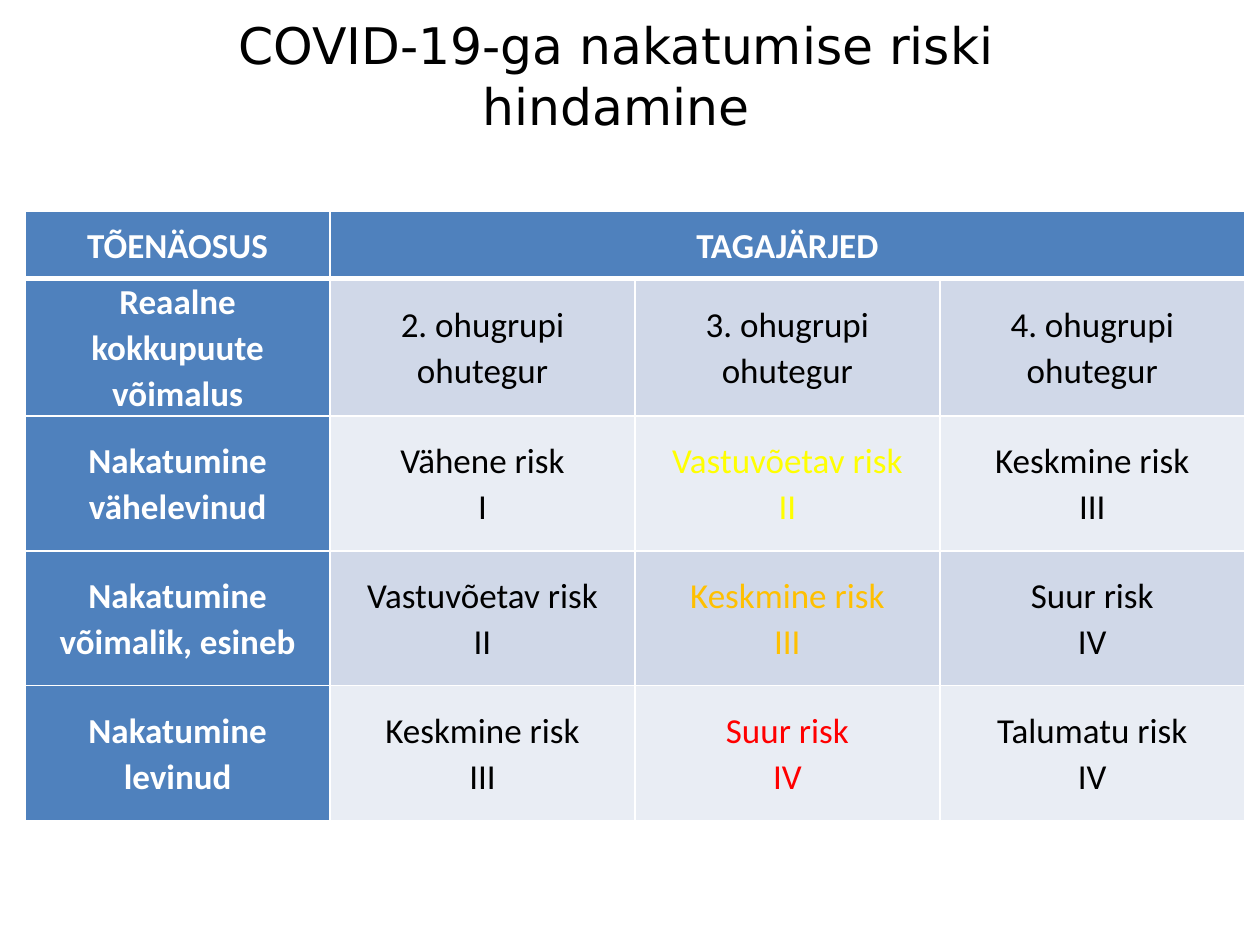
from dataclasses import dataclass

from lxml import etree
from pptx import Presentation
from pptx.dml.color import RGBColor
from pptx.enum.text import MSO_ANCHOR, MSO_AUTO_SIZE, PP_ALIGN
from pptx.oxml.ns import qn
from pptx.util import Inches, Pt

CENTER = PP_ALIGN.CENTER
MIDDLE = MSO_ANCHOR.MIDDLE
NO_FIT = MSO_AUTO_SIZE.NONE
TITLE_ONLY = 5


@dataclass(frozen=True)
class Theme:
    white: str = "FFFFFF"
    black: str = "000000"
    head: str = "4F81BD"
    bands: tuple = ("D0D8E8", "E9EDF4")
    yellow: str = "FFFF00"
    amber: str = "FFC000"
    red: str = "FF0000"
    title_font: str = "DejaVu Sans"
    title_size: float = 28.8
    font: str = "Calibri"
    size: int = 20
    thin: int = 1
    thick: int = 3


THEME = Theme()

TITLE = "COVID-19-ga nakatumise riski hindamine"
ROWS = [
    ["TÕENÄOSUS", "TAGAJÄRJED", "", ""],
    ["Reaalne kokkupuute võimalus", "2. ohugrupi ohutegur",
     "3. ohugrupi ohutegur", "4. ohugrupi ohutegur"],
    ["Nakatumine vähelevinud", "Vähene risk\nI",
     "Vastuvõetav risk\nII", "Keskmine risk\nIII"],
    ["Nakatumine võimalik, esineb", "Vastuvõetav risk\nII",
     "Keskmine risk\nIII", "Suur risk\nIV"],
    ["Nakatumine levinud", "Keskmine risk\nIII",
     "Suur risk\nIV", "Talumatu risk\nIV"],
]
ACCENTS = {(2, 2): THEME.yellow, (3, 2): THEME.amber, (4, 2): THEME.red}
COL_WIDTH = 2.42
HEAD_HEIGHT = 0.53
ROW_HEIGHT = 1.07


def apply(target, values):
    for name, value in values.items():
        setattr(target, name, value)


def style(para, font, size, color, bold=False):
    para.alignment = CENTER
    apply(para.font, {"name": font, "size": Pt(size), "bold": bold})
    para.font.color.rgb = RGBColor.from_string(color)


def add_title(slide):
    title = slide.shapes.title
    apply(title, {"left": Inches(0.75), "top": Inches(0.13),
                  "width": Inches(8.28), "height": Inches(0.93)})
    frame = title.text_frame
    frame.text = TITLE
    apply(frame, {"word_wrap": True, "auto_size": NO_FIT,
                  "vertical_anchor": MIDDLE})
    style(frame.paragraphs[0], THEME.title_font, THEME.title_size, THEME.black)


def set_borders(cell, widths):
    """Draw white borders; widths maps a side (L, R, T, B) to points."""
    props = cell._tc.get_or_add_tcPr()
    for spot, (side, width) in enumerate(widths.items()):
        line = etree.Element(qn(f"a:ln{side}"), w=str(Pt(width)))
        fill = etree.SubElement(line, qn("a:solidFill"))
        etree.SubElement(fill, qn("a:srgbClr"), val=THEME.white)
        props.insert(spot, line)


def fill_cell(cell, text, row, col):
    is_head = row == 0 or col == 0
    back = THEME.head if is_head else THEME.bands[(row - 1) % 2]
    color = THEME.white if is_head else ACCENTS.get((row, col), THEME.black)
    cell.fill.solid()
    cell.fill.fore_color.rgb = RGBColor.from_string(back)
    apply(cell, {"vertical_anchor": MIDDLE,
                 "margin_left": Inches(0.07), "margin_right": Inches(0.07),
                 "margin_top": 0, "margin_bottom": 0})
    set_borders(cell, {
        "L": THEME.thin,
        "R": THEME.thin,
        "T": THEME.thick if row == 1 else THEME.thin,
        "B": THEME.thick if row == 0 else THEME.thin,
    })
    cell.text = text
    for para in cell.text_frame.paragraphs:
        style(para, THEME.font, THEME.size, color, is_head)
        para.line_spacing = 1.07


def add_matrix(slide):
    count, width = len(ROWS), len(ROWS[0])
    heights = [HEAD_HEIGHT] + [ROW_HEIGHT] * (count - 1)
    frame = slide.shapes.add_table(
        count, width, Inches(0.2), Inches(1.68),
        Inches(COL_WIDTH * width), Inches(sum(heights)))
    table = frame.table
    for col in table.columns:
        col.width = Inches(COL_WIDTH)
    for row, height in zip(table.rows, heights):
        row.height = Inches(height)
    for r, texts in enumerate(ROWS):
        for c, text in enumerate(texts):
            fill_cell(table.cell(r, c), text, r, c)
    table.cell(0, 1).merge(table.cell(0, width - 1))


def main():
    deck = Presentation()
    apply(deck, {"slide_width": Inches(10), "slide_height": Inches(7.5)})
    slide = deck.slides.add_slide(deck.slide_layouts[TITLE_ONLY])
    add_title(slide)
    add_matrix(slide)
    deck.save("out.pptx")


if __name__ == "__main__":
    main()
